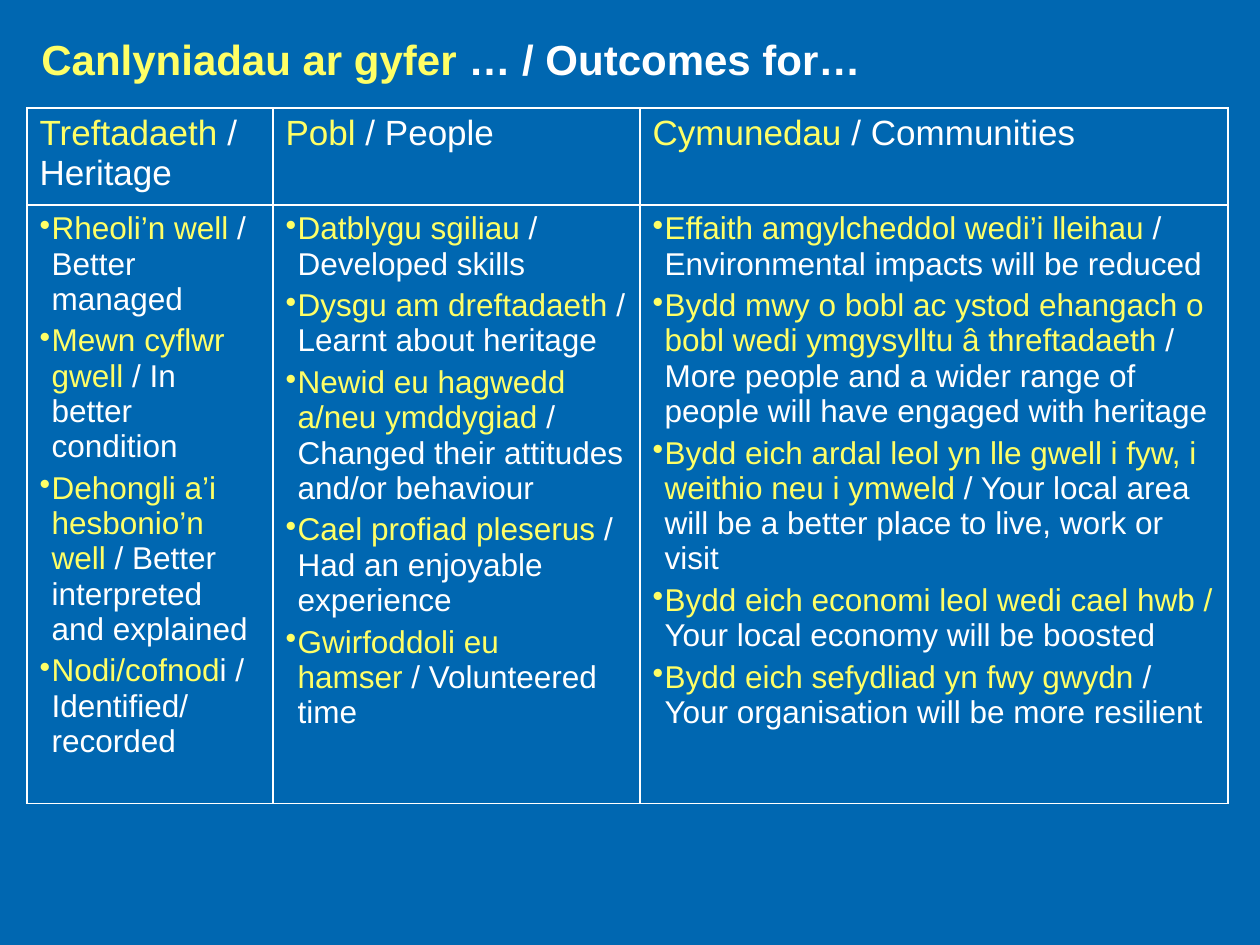
from dataclasses import dataclass

from lxml import etree
from pptx import Presentation
from pptx.dml.color import RGBColor
from pptx.enum.text import MSO_ANCHOR, MSO_AUTO_SIZE, PP_ALIGN
from pptx.oxml.ns import qn
from pptx.util import Emu, Pt

CENTER = PP_ALIGN.CENTER
LEFT = PP_ALIGN.LEFT
MIDDLE = MSO_ANCHOR.MIDDLE
FIT_SHAPE = MSO_AUTO_SIZE.SHAPE_TO_FIT_TEXT

PX_PER_INCH = 126
FONT = "Arial"
COLORS = {"background": "0067B1", "welsh": "FFFF66", "english": "FFFFFF", "border": "FFFFFF"}
TITLE_SIZE, HEADING_SIZE, ITEM_SIZE = 24, 20, 18
BULLET_INDENT = 12
ROW_HEIGHTS = (97, 598)


@dataclass(frozen=True)
class Phrase:
    welsh: str
    english: str


@dataclass(frozen=True)
class Outcome:
    width: int
    heading: Phrase
    items: tuple[Phrase, ...]


TITLE = Phrase("Canlyniadau ar gyfer ", "… / Outcomes for…")
OUTCOMES = (
    Outcome(246, Phrase("Treftadaeth ", "/ Heritage"), (
        Phrase("Rheoli’n well ", "/ Better managed"),
        Phrase("Mewn cyflwr gwell ", "/ In better condition"),
        Phrase("Dehongli a’i hesbonio’n well ", "/ Better interpreted and explained"),
        Phrase("Nodi/cofnod", "i / Identified/ recorded"),
    )),
    Outcome(367, Phrase("Pobl ", "/ People"), (
        Phrase("Datblygu sgiliau ", "/ Developed skills"),
        Phrase("Dysgu am dreftadaeth ", "/ Learnt about heritage"),
        Phrase("Newid eu hagwedd a/neu ymddygiad ", "/ Changed their attitudes and/or behaviour"),
        Phrase("Cael profiad pleserus ", "/ Had an enjoyable experience"),
        Phrase("Gwirfoddoli eu hamser ", "/ Volunteered time"),
    )),
    Outcome(588, Phrase("Cymunedau ", "/ Communities"), (
        Phrase("Effaith amgylcheddol wedi’i lleihau ", "/ Environmental impacts will be reduced"),
        Phrase("Bydd mwy o bobl ac ystod ehangach o bobl wedi ymgysylltu â threftadaeth ",
               "/ More people and a wider range of people will have engaged with heritage"),
        Phrase("Bydd eich ardal leol yn lle gwell i fyw, i weithio neu i ymweld ",
               "/ Your local area will be a better place to live, work or visit"),
        Phrase("Bydd eich economi leol wedi cael hwb / ", "Your local economy will be boosted"),
        Phrase("Bydd eich sefydliad yn fwy gwydn ", "/ Your organisation will be more resilient"),
    )),
)


def px(length: int) -> Emu:
    return Emu(round(length * 914400 / PX_PER_INCH))


def color(name: str) -> RGBColor:
    return RGBColor.from_string(COLORS[name])


def write_phrase(para, phrase: Phrase, size: int, bold: bool = False) -> None:
    for text, name in ((phrase.welsh, "welsh"), (phrase.english, "english")):
        span = para.add_run()
        span.text = text
        span.font.name = FONT
        span.font.size = Pt(size)
        span.font.bold = bold
        span.font.color.rgb = color(name)


def add_bullet(para) -> None:
    properties = para._p.get_or_add_pPr()
    properties.set("marL", str(px(BULLET_INDENT)))
    properties.set("indent", str(-px(BULLET_INDENT)))
    etree.SubElement(properties, qn("a:buChar")).set("char", "•")


def format_cell(cell) -> None:
    cell.fill.background()
    properties = cell._tc.get_or_add_tcPr()
    for position, side in enumerate(("lnL", "lnR", "lnT", "lnB")):
        line = etree.Element(qn(f"a:{side}"), w=str(Pt(1)))
        fill = etree.SubElement(line, qn("a:solidFill"))
        etree.SubElement(fill, qn("a:srgbClr")).set("val", COLORS["border"])
        properties.insert(position, line)


def add_title(page) -> None:
    box = page.shapes.title
    box.left, box.top, box.width, box.height = px(25), px(27), px(852), px(63)
    frame = box.text_frame
    frame.word_wrap = False
    frame.auto_size = FIT_SHAPE
    frame.vertical_anchor = MIDDLE
    para = frame.paragraphs[0]
    para.alignment = CENTER
    write_phrase(para, TITLE, TITLE_SIZE, bold=True)


def add_items(cell, items: tuple[Phrase, ...]) -> None:
    frame = cell.text_frame
    for index, item in enumerate(items):
        para = frame.add_paragraph() if index else frame.paragraphs[0]
        add_bullet(para)
        para.alignment = LEFT
        if index:
            para.space_before = Pt(ITEM_SIZE * 0.2)
        write_phrase(para, item, ITEM_SIZE)


def add_outcome_table(page) -> None:
    width = sum(outcome.width for outcome in OUTCOMES)
    table = page.shapes.add_table(
        len(ROW_HEIGHTS), len(OUTCOMES), px(27), px(108), px(width), px(sum(ROW_HEIGHTS))
    ).table
    table.first_row = False
    table.horz_banding = False
    for row, height in zip(table.rows, ROW_HEIGHTS):
        row.height = px(height)
    for index, outcome in enumerate(OUTCOMES):
        table.columns[index].width = px(outcome.width)
        heading, body = table.cell(0, index), table.cell(1, index)
        format_cell(heading)
        format_cell(body)
        write_phrase(heading.text_frame.paragraphs[0], outcome.heading, HEADING_SIZE)
        add_items(body, outcome.items)


def main() -> None:
    deck = Presentation()
    deck.slide_width, deck.slide_height = px(1260), px(945)
    page = deck.slides.add_slide(deck.slide_layouts[5])
    page.background.fill.solid()
    page.background.fill.fore_color.rgb = color("background")
    add_title(page)
    add_outcome_table(page)
    deck.save("out.pptx")


if __name__ == "__main__":
    main()
